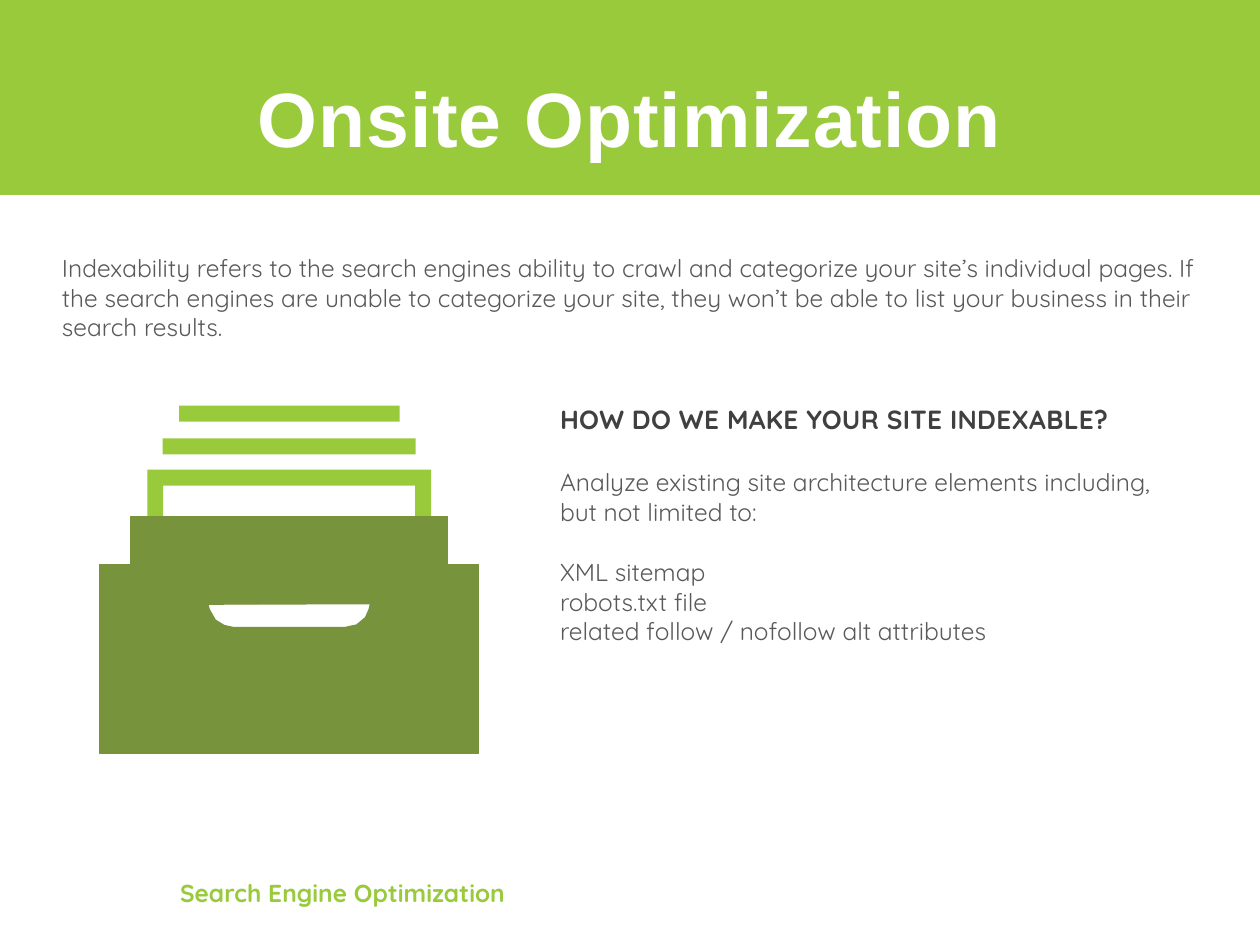
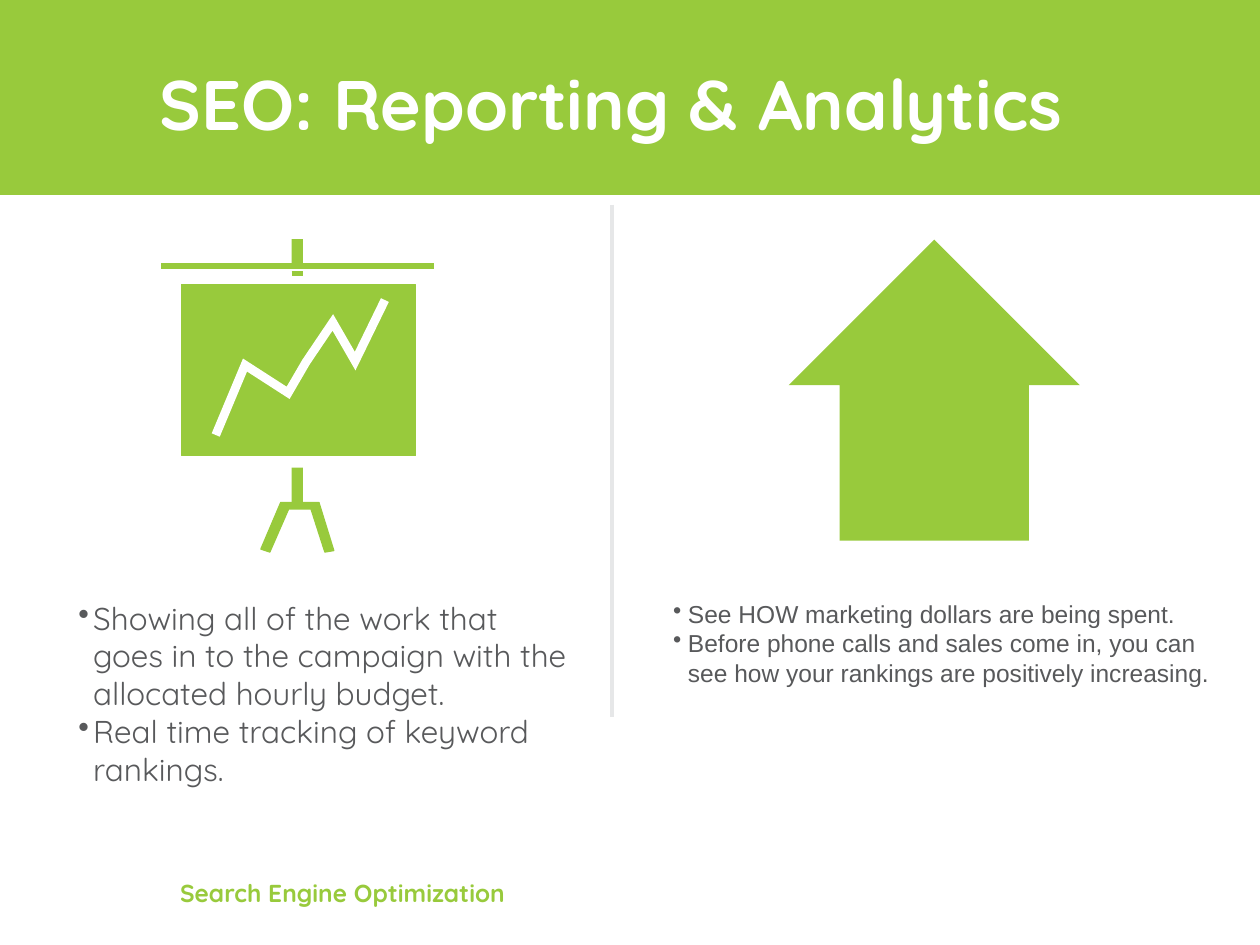
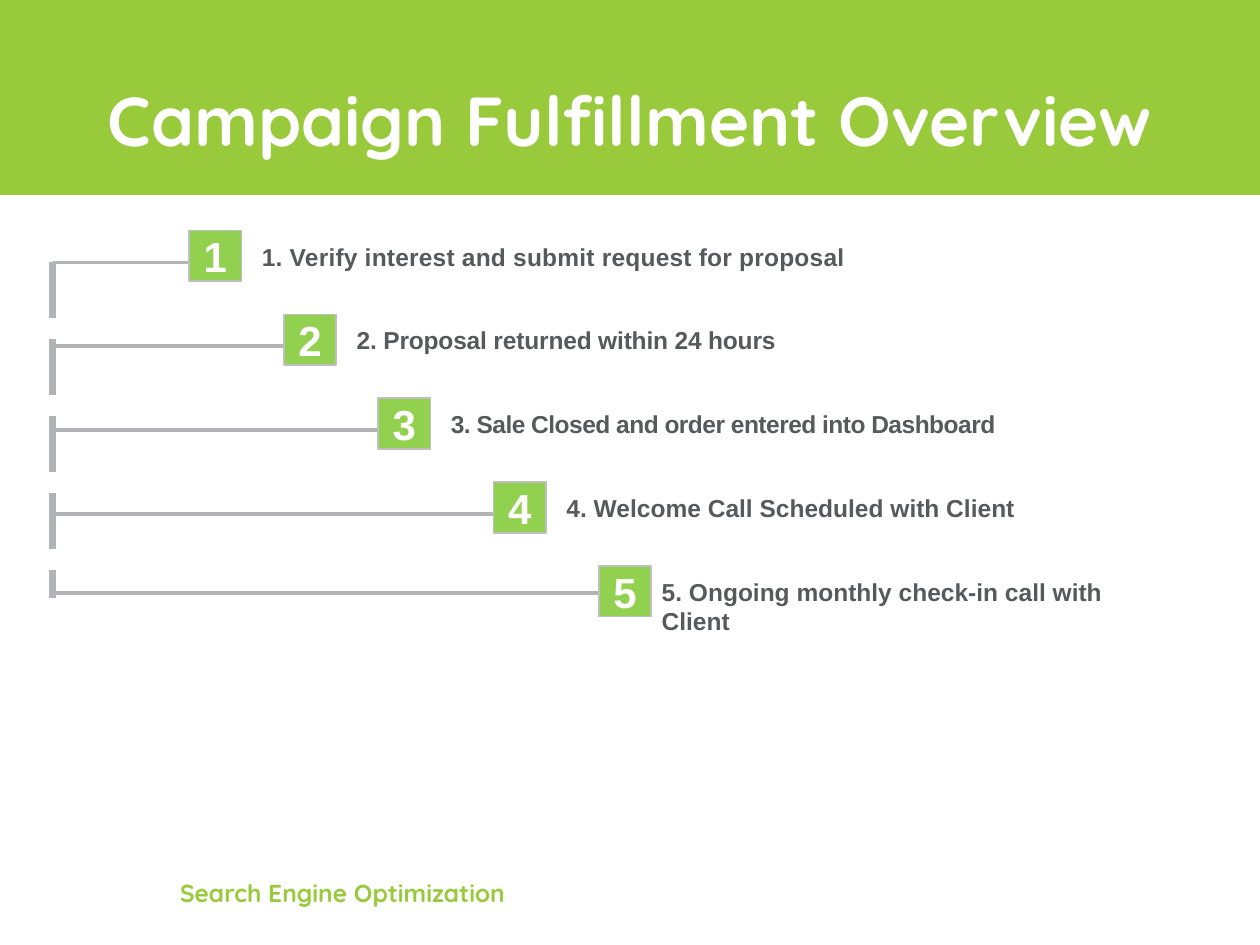
from dataclasses import dataclass
from typing import Optional

from lxml import etree
from pptx import Presentation
from pptx.dml.color import RGBColor
from pptx.enum.dml import MSO_LINE
from pptx.enum.shapes import MSO_CONNECTOR, MSO_SHAPE
from pptx.enum.text import PP_ALIGN
from pptx.oxml.ns import qn
from pptx.util import Cm, Pt

RECTANGLE = MSO_SHAPE.RECTANGLE
UP_ARROW = MSO_SHAPE.UP_ARROW
STRAIGHT = MSO_CONNECTOR.STRAIGHT
LONG_DASH = MSO_LINE.LONG_DASH
LEFT, CENTER = PP_ALIGN.LEFT, PP_ALIGN.CENTER


@dataclass(frozen=True)
class Theme:
    green: str = "98CA3C"
    olive: str = "77933C"
    number_green: str = "92D050"
    number_edge: str = "BFBFBF"
    white: str = "FFFFFF"
    body: str = "58595B"
    heading: str = "404040"
    rail: str = "B1B3B6"
    divider: str = "E6E7E8"
    sans: str = "Arial"
    round_sans: str = "Quicksand"
    line_height: float = 1.2


THEME = Theme()


@dataclass(frozen=True)
class TextStyle:
    size: float
    color: str = THEME.body
    font: str = THEME.round_sans
    bold: bool = False
    spacing: float = 0
    align: PP_ALIGN = LEFT


@dataclass(frozen=True)
class Para:
    text: str
    style: TextStyle
    before: float = 0
    bullet: bool = False


@dataclass(frozen=True)
class Box:
    """Left, top, width and height in centimetres."""
    left: float
    top: float
    width: float
    height: float


@dataclass(frozen=True)
class Step:
    left: float
    text: str
    spacing: float = 0
    text_offset: float = 1.47
    rail_offset: float = 0.64


BODY = TextStyle(14)
LARGE_BODY = TextStyle(18)
SANS_BODY = TextStyle(14, font=THEME.sans)
HEADING = TextStyle(15, THEME.heading, bold=True, spacing=0.2)
FOOTER = TextStyle(14, THEME.green, bold=True)
TITLE = TextStyle(40, THEME.white, bold=True, align=CENTER)
SANS_TITLE = TextStyle(44, THEME.white, THEME.sans, True, 0.5, CENTER)
WIDE_TITLE = TextStyle(39.6, THEME.white, bold=True, align=CENTER)
NUMBER = TextStyle(24, THEME.white, THEME.sans, True, align=CENTER)

Points = list[tuple[float, float]]


# Drawing helpers
def rgb(color: str) -> RGBColor:
    return RGBColor.from_string(color)


def write(frame, paras: list[Para]) -> None:
    frame_format = dict(word_wrap=True, margin_left=0, margin_top=0,
                        margin_right=0, margin_bottom=0)
    for name, value in frame_format.items():
        setattr(frame, name, value)
    for index, para in enumerate(paras):
        style = para.style
        paragraph = frame.paragraphs[0] if index == 0 else frame.add_paragraph()
        if para.bullet:
            add_bullet(paragraph, style.color)
        paragraph_format = dict(alignment=style.align, space_before=Pt(para.before),
                                line_spacing=Pt(style.size * THEME.line_height))
        for name, value in paragraph_format.items():
            setattr(paragraph, name, value)
        run = paragraph.add_run()
        run.text = para.text
        font_format = dict(name=style.font, size=Pt(style.size), bold=style.bold)
        for name, value in font_format.items():
            setattr(run.font, name, value)
        run.font.color.rgb = rgb(style.color)
        if style.spacing:
            run.font._element.set("spc", str(round(style.spacing * 100)))


def add_bullet(paragraph, color: str) -> None:
    properties = paragraph._p.get_or_add_pPr()
    properties.set("marL", str(Cm(0.36)))
    properties.set("indent", str(Cm(-0.3)))
    bullet_color = etree.SubElement(properties, qn("a:buClr"))
    etree.SubElement(bullet_color, qn("a:srgbClr"), val=color)
    etree.SubElement(properties, qn("a:buChar"), char="•")


def add_text(slide, box: Box, *paras: Para) -> None:
    area = slide.shapes.add_textbox(Cm(box.left), Cm(box.top), Cm(box.width), Cm(box.height))
    write(area.text_frame, list(paras))


def paint(shape, fill: Optional[str], edge: Optional[str] = None, width: float = 0.75) -> None:
    shape.shadow.inherit = False
    if fill:
        shape.fill.solid()
        shape.fill.fore_color.rgb = rgb(fill)
    else:
        shape.fill.background()
    if edge:
        shape.line.color.rgb = rgb(edge)
        shape.line.width = Pt(width)
    else:
        shape.line.fill.background()


def add_block(slide, box: Box, fill: str, edge: Optional[str] = None,
              width: float = 0.75, kind: MSO_SHAPE = RECTANGLE):
    block = slide.shapes.add_shape(kind, Cm(box.left), Cm(box.top),
                                   Cm(box.width), Cm(box.height))
    paint(block, fill, edge, width)
    return block


def add_outline(slide, contours: list[Points], close: bool = True):
    def to_emu(points: Points) -> Points:
        return [(Cm(x), Cm(y)) for x, y in points]

    first, *others = [to_emu(points) for points in contours]
    builder = slide.shapes.build_freeform(*first[0])
    builder.add_line_segments(first[1:], close=close)
    for points in others:
        builder.move_to(*points[0])
        builder.add_line_segments(points[1:], close=close)
    return builder.convert_to_shape()


def add_line(slide, start: tuple[float, float], end: tuple[float, float],
             color: str, width: float):
    line = slide.shapes.add_connector(STRAIGHT, *(Cm(value) for value in start + end))
    line.line.color.rgb = rgb(color)
    line.line.width = Pt(width)
    etree.SubElement(line._element.spPr, qn("a:effectLst"))
    return line


def new_slide(deck, title: str, title_box: Box, style: TextStyle):
    slide = deck.slides.add_slide(deck.slide_layouts[6])
    add_block(slide, Box(0, 0, 25.4, 3.93), THEME.green)
    add_text(slide, Box(3.63, 17.7, 6.8, 0.7), Para("Search Engine Optimization", FOOTER))
    add_text(slide, title_box, Para(title, style))
    return slide


# Icons
def draw_file_drawer(slide) -> None:
    for sheet in (Box(3.28, 8.84, 5.1, 0.32), Box(3.61, 8.18, 4.45, 0.32)):
        add_block(slide, sheet, THEME.green)
    front_sheet = [(2.97, 11.05), (2.97, 9.47), (8.69, 9.47), (8.69, 11.05),
                   (8.37, 11.05), (8.37, 9.79), (3.29, 9.79), (3.29, 11.05)]
    paint(add_outline(slide, [front_sheet]), THEME.green)
    drawer = [(2.64, 10.41), (9.02, 10.41), (9.02, 11.38), (9.65, 11.38),
              (9.65, 15.19), (2.01, 15.19), (2.01, 11.38), (2.64, 11.38)]
    handle = [(4.19, 12.18), (4.22, 12.29), (4.34, 12.5), (4.52, 12.61), (4.7, 12.65),
              (6.96, 12.65), (7.19, 12.6), (7.37, 12.45), (7.44, 12.29), (7.47, 12.17)]
    paint(add_outline(slide, [drawer, handle]), THEME.olive, THEME.olive)


def draw_chart_stand(slide) -> None:
    pole_left, pole_width = 5.88, 0.23
    for top, height in ((4.82, 0.6), (9.43, 0.7)):
        add_block(slide, Box(pole_left, top, pole_width, height), THEME.green)
    add_line(slide, (3.25, 5.36), (8.75, 5.36), THEME.green, 3.27)
    add_line(slide, (pole_left, 5.51), (pole_left + pole_width, 5.51), THEME.green, 3.21)
    add_block(slide, Box(3.66, 5.74, 4.72, 3.45), THEME.green, THEME.green)
    legs = [(5.66, 10.13), (6.43, 10.13), (6.73, 11.1), (6.55, 11.13),
            (6.27, 10.26), (5.82, 10.26), (5.44, 11.13), (5.26, 11.07)]
    paint(add_outline(slide, [legs]), THEME.green, THEME.green)
    trend = [(4.35, 8.77), (4.94, 7.36), (5.81, 7.92), (6.17, 7.3),
             (6.71, 6.5), (7.16, 7.28), (7.76, 6.05)]
    trend_line = add_outline(slide, [trend], close=False)
    paint(trend_line, None, THEME.white, 5)
    etree.SubElement(trend_line.line._get_or_add_ln(), qn("a:miter"), lim="800000")


# Slides
def build_onsite(deck) -> None:
    slide = new_slide(deck, "Onsite Optimization", Box(1.27, 1.42, 22.86, 1.88), SANS_TITLE)
    add_text(slide, Box(1.25, 5.11, 23.11, 1.8), Para(
        "Indexability refers to the search engines ability to crawl and categorize your "
        "site’s individual pages. If the search engines are unable to categorize your site, "
        "they won’t be able to list your business in their search results.", BODY))
    draw_file_drawer(slide)
    add_text(
        slide, Box(11.29, 8.13, 12.6, 4.9),
        Para("HOW DO WE MAKE YOUR SITE INDEXABLE?", HEADING),
        Para("Analyze existing site architecture elements including, but not limited to:",
             BODY, before=18.5),
        Para("XML sitemap", BODY, before=18),
        Para("robots.txt file", BODY),
        Para("related follow / nofollow alt attributes", BODY))


def build_reporting(deck) -> None:
    slide = new_slide(deck, "SEO: Reporting & Analytics", Box(1.33, 1.22, 21.97, 1.7), TITLE)
    draw_chart_stand(slide)
    arrow = add_block(slide, Box(15.9, 4.83, 5.87, 6.07), THEME.green, kind=UP_ARROW)
    arrow.adjustments[0] = 0.65
    arrow.adjustments[1] = 0.5
    add_line(slide, (12.34, 4.13), (12.34, 14.45), THEME.divider, 2)
    columns = [
        (Box(1.52, 12.07, 9.9, 3.84), LARGE_BODY, [
            "Showing all of the work that goes in to the campaign with "
            "the allocated hourly budget.",
            "Real time tracking of keyword rankings."]),
        (Box(13.51, 12.07, 11.05, 1.8), SANS_BODY, [
            "See HOW marketing dollars are being spent.",
            "Before phone calls and sales come in, you can see how your rankings "
            "are positively increasing."]),
    ]
    for box, style, points in columns:
        add_text(slide, box, *(Para(point, style, bullet=True) for point in points))


def build_campaign(deck) -> None:
    slide = new_slide(deck, "Campaign Fulfillment Overview",
                      Box(1.27, 1.55, 22.86, 1.7), WIDE_TITLE)
    steps = [
        Step(3.81, "Verify interest and submit request for proposal", 0.1),
        Step(5.72, "Proposal returned within 24 hours", -0.1),
        Step(7.62, "Sale Closed and order entered into Dashboard", -0.3),
        Step(9.95, "Welcome Call Scheduled with Client"),
        Step(12.07, "Ongoing monthly check-in call with Client",
             text_offset=1.27, rail_offset=0.54),
    ]
    first_top, pitch, rail_x = 4.65, 1.69, 1.06
    rail = add_line(slide, (rail_x, 5.29), (rail_x, 12.06), THEME.rail, 4)
    rail.line.dash_style = LONG_DASH
    for index, step in enumerate(steps):
        number = index + 1
        top = first_top + index * pitch
        branch_y = top + step.rail_offset
        add_line(slide, (rail_x, branch_y), (step.left, branch_y), THEME.rail, 2)
        square = add_block(slide, Box(step.left, top, 1.06, 1.02),
                           THEME.number_green, THEME.number_edge, 1)
        write(square.text_frame, [Para(str(number), NUMBER)])
        label = TextStyle(14, font=THEME.sans, bold=True, spacing=step.spacing)
        add_text(slide, Box(step.left + step.text_offset, top + 0.22, 10.3 if number == 5 else 14, 0.6),
                 Para(f"{number}. {step.text}", label))


def main() -> None:
    deck = Presentation()
    deck.slide_width, deck.slide_height = Cm(25.4), Cm(19.05)
    build_onsite(deck)
    build_reporting(deck)
    build_campaign(deck)
    deck.save("out.pptx")


if __name__ == "__main__":
    main()
